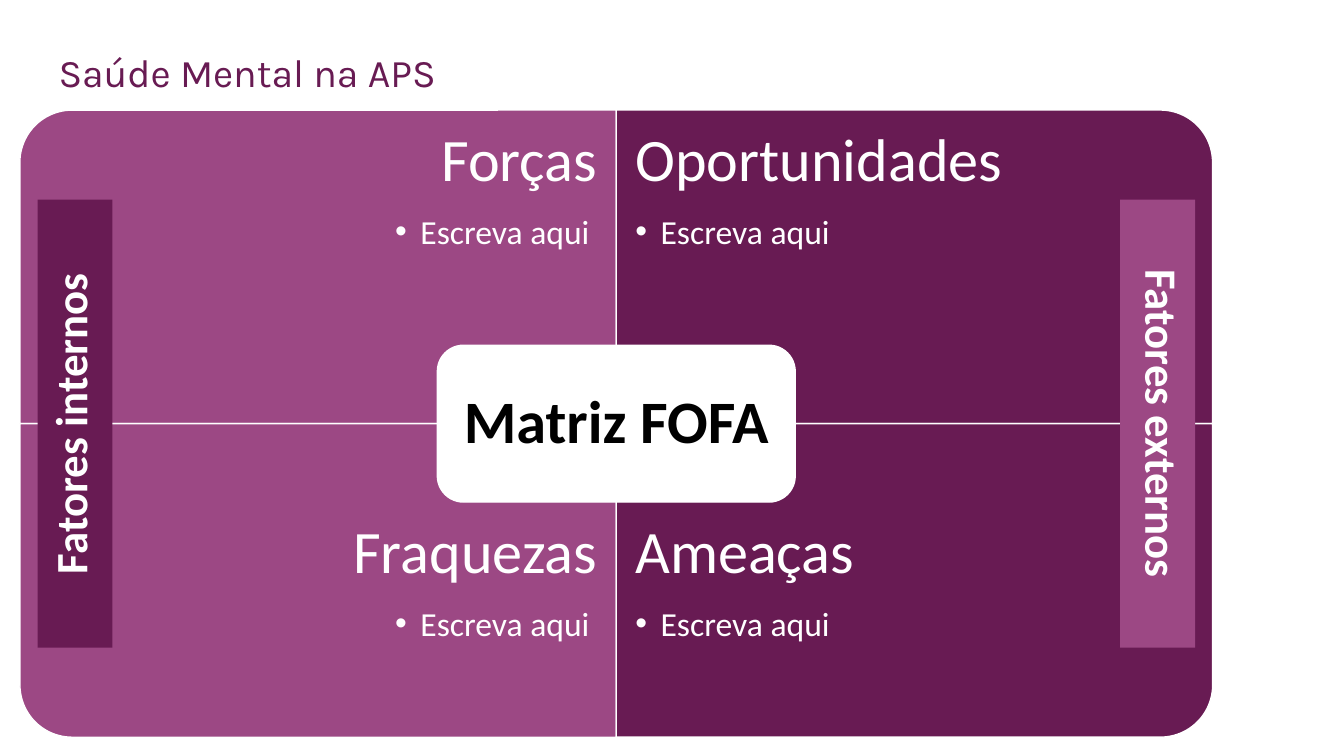
from lxml.etree import SubElement
from pptx import Presentation
from pptx.dml.color import RGBColor
from pptx.enum.shapes import MSO_SHAPE
from pptx.enum.text import MSO_ANCHOR, MSO_AUTO_SIZE, PP_ALIGN
from pptx.oxml.ns import qn
from pptx.util import Pt

COLORS = {"plum": "681B53", "mauve": "9C4884", "white": "FFFFFF", "black": "000000"}
QUADRANT_WIDTH, QUADRANT_HEIGHT = 426, 224
# heading, item, column, row, rotation that turns the round corner outwards
QUADRANTS = [
    ("Forças", "Escreva aqui ", 0, 0, 270),
    ("Oportunidades", "Escreva aqui", 1, 0, 0),
    ("Fraquezas", "Escreva aqui ", 0, 1, 180),
    ("Ameaças", "Escreva aqui", 1, 1, 90),
]


def color(name):
    return RGBColor.from_string(COLORS[name])


def add_run(paragraph, text, size, color_name="white", font="Calibri", bold=False):
    run = paragraph.add_run()
    run.text = text
    run.font.size = Pt(size)
    run.font.name = font
    run.font.bold = bold
    run.font.color.rgb = color(color_name)


def add_filled_shape(slide, kind, left, top, width, height, fill, outlined=True):
    shape = slide.shapes.add_shape(kind, Pt(left), Pt(top), Pt(width), Pt(height))
    shape.shadow.inherit = False
    shape.fill.solid()
    shape.fill.fore_color.rgb = color(fill)
    if outlined:
        shape.line.color.rgb = color("white")
        shape.line.width = Pt(1)
    else:
        shape.line.fill.background()
    return shape


def set_insets(frame, inset):
    frame.word_wrap = True
    frame.margin_left = frame.margin_right = Pt(inset)
    frame.margin_top = frame.margin_bottom = Pt(inset)


def add_bullet(paragraph, indent):
    properties = paragraph._p.get_or_add_pPr()
    properties.set("marL", str(Pt(indent)))
    properties.set("indent", str(-Pt(indent)))
    SubElement(properties, qn("a:buFont"), typeface="Arial")
    SubElement(properties, qn("a:buChar"), char="•")


def add_title(slide, left, top, width, height):
    title = slide.shapes.title
    title.left, title.top = Pt(left), Pt(top)
    title.width, title.height = Pt(width), Pt(height)
    frame = title.text_frame
    frame.word_wrap = True
    frame.auto_size = MSO_AUTO_SIZE.NONE
    frame.vertical_anchor = MSO_ANCHOR.TOP
    paragraph = frame.paragraphs[0]
    paragraph.alignment = PP_ALIGN.LEFT
    add_run(paragraph, "Saúde Mental na APS", 28, "plum", "Karla")


def add_quadrant(slide, left, top, heading, item, column, row, rotation):
    width, height = QUADRANT_WIDTH, QUADRANT_HEIGHT
    shape_width, shape_height = (height, width) if rotation % 180 else (width, height)
    panel = add_filled_shape(
        slide, MSO_SHAPE.ROUND_1_RECTANGLE,
        left + (width - shape_width) / 2, top + (height - shape_height) / 2,
        shape_width, shape_height, "plum" if column else "mauve")
    panel.rotation = rotation

    text_height = height * 0.75
    box = slide.shapes.add_textbox(
        Pt(left), Pt(top + row * (height - text_height)), Pt(width), Pt(text_height))
    frame = box.text_frame
    set_insets(frame, 13.7)
    heading_paragraph = frame.paragraphs[0]
    item_paragraph = frame.add_paragraph()
    item_paragraph.level = 1
    add_bullet(item_paragraph, 18)
    for paragraph, text, size, space in (
            (heading_paragraph, heading, 43, 15), (item_paragraph, item, 24, 4)):
        paragraph.alignment = PP_ALIGN.LEFT if column else PP_ALIGN.RIGHT
        paragraph.line_spacing = 0.9
        paragraph.space_after = Pt(space)
        add_run(paragraph, text, size)


def add_center_label(slide, center_x, center_y):
    width, height = QUADRANT_WIDTH * 0.6, QUADRANT_HEIGHT * 0.5
    label = add_filled_shape(
        slide, MSO_SHAPE.ROUNDED_RECTANGLE,
        center_x - width / 2, center_y - height / 2, width, height, "white")
    frame = label.text_frame
    set_insets(frame, 13)
    frame.vertical_anchor = MSO_ANCHOR.MIDDLE
    paragraph = frame.paragraphs[0]
    paragraph.alignment = PP_ALIGN.CENTER
    paragraph.line_spacing = 0.9
    add_run(paragraph, "Matriz FOFA", 43, "black", bold=True)


def add_factor_bar(slide, left, center_y, width, height, text, fill, rotation):
    bar = add_filled_shape(
        slide, MSO_SHAPE.RECTANGLE, left, center_y - height / 2, width, height,
        fill, outlined=False)
    bar.rotation = rotation
    bar.element.txBody.bodyPr.set("vert", "vert270")
    frame = bar.text_frame
    frame.word_wrap = True
    frame.vertical_anchor = MSO_ANCHOR.TOP
    paragraph = frame.paragraphs[0]
    paragraph.alignment = PP_ALIGN.CENTER
    add_run(paragraph, text, 32, bold=True)


def add_matrix(slide, left, top):
    for heading, item, column, row, rotation in QUADRANTS:
        add_quadrant(slide, left + column * QUADRANT_WIDTH, top + row * QUADRANT_HEIGHT,
                     heading, item, column, row, rotation)
    center_y = top + QUADRANT_HEIGHT
    add_center_label(slide, left + QUADRANT_WIDTH, center_y)
    bar_width, bar_height, margin = 53.5, 320, 12.6
    right_bar = left + 2 * QUADRANT_WIDTH - margin - bar_width
    add_factor_bar(slide, left + margin, center_y, bar_width, bar_height,
                   "Fatores internos", "plum", 0)
    add_factor_bar(slide, right_bar, center_y, bar_width, bar_height,
                   "Fatores externos", "mauve", 180)


def main():
    presentation = Presentation()
    presentation.slide_width, presentation.slide_height = Pt(960), Pt(540)
    slide = presentation.slides.add_slide(presentation.slide_layouts[5])
    add_title(slide, 34.6, 31, 510, 41)
    add_matrix(slide, 14.2, 78.6)
    presentation.save("out.pptx")


if __name__ == "__main__":
    main()
